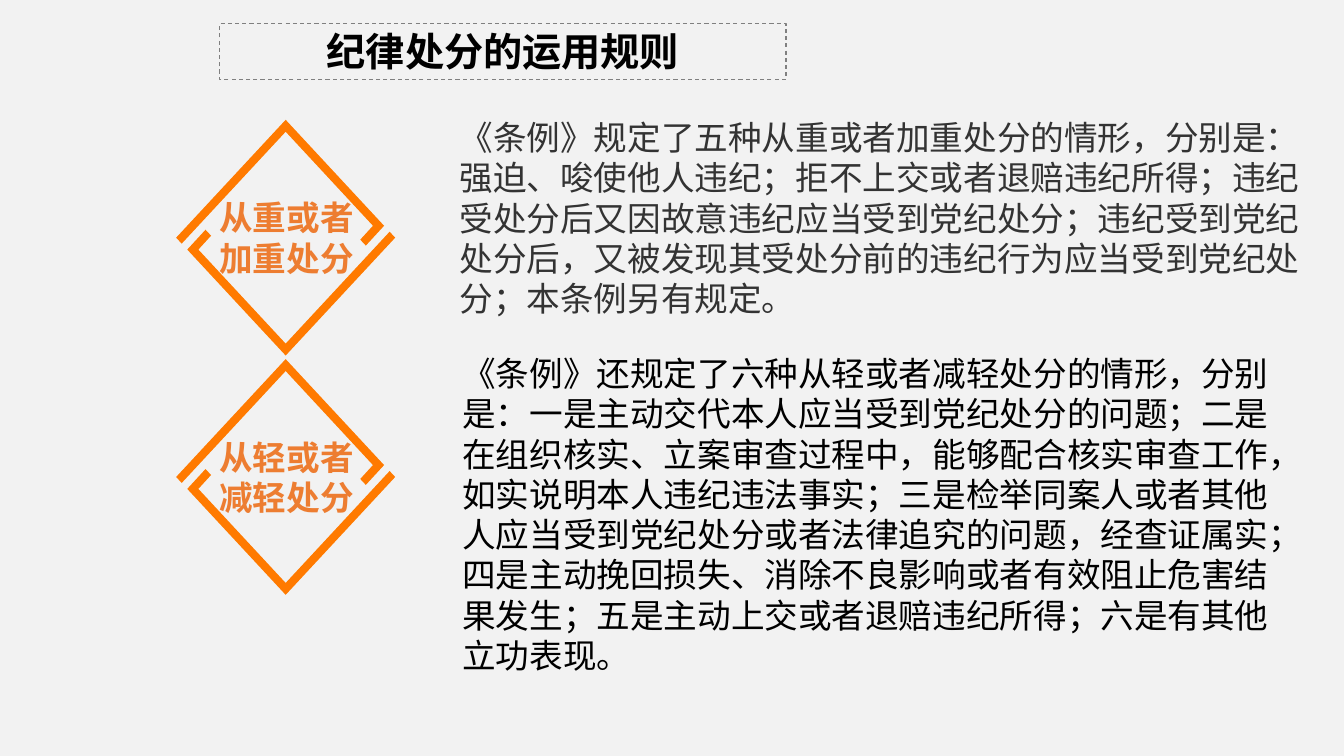
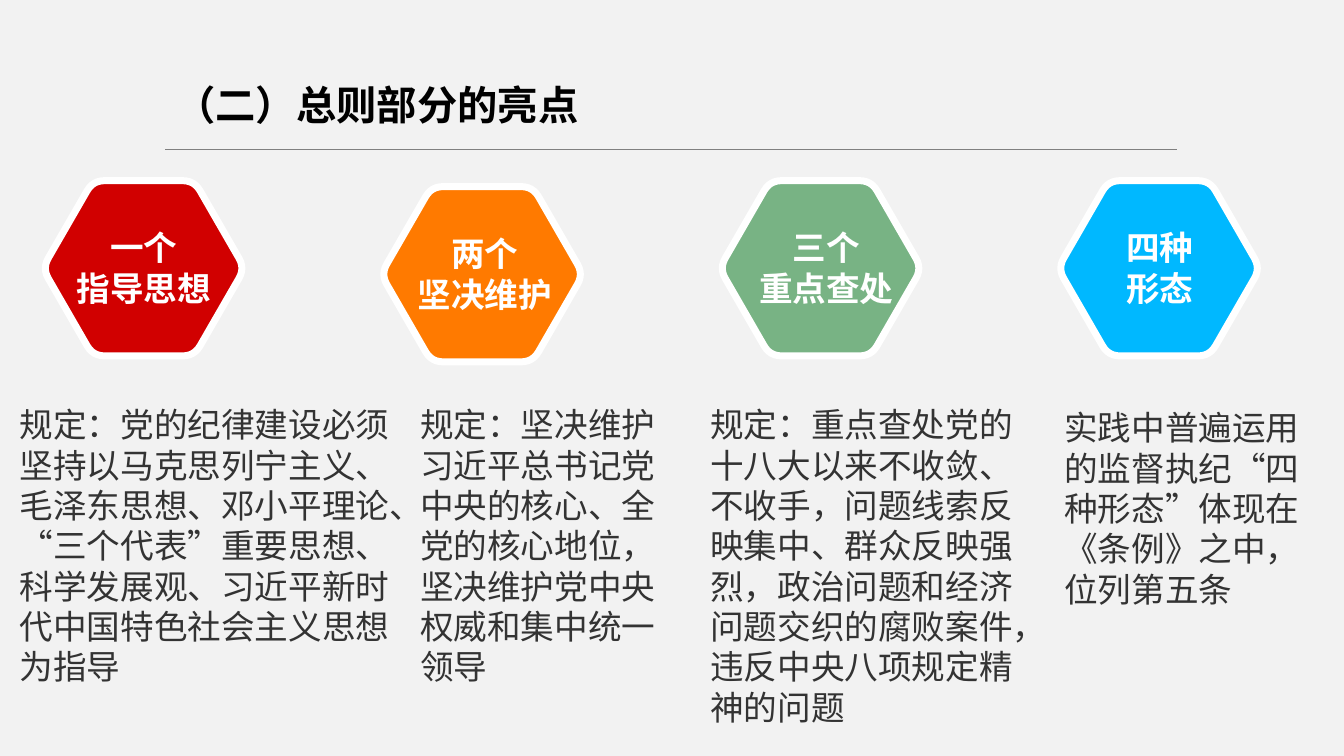
import math
from dataclasses import dataclass
from itertools import chain

from lxml import etree
from pptx import Presentation
from pptx.dml.color import RGBColor
from pptx.enum import dml, shapes, text
from pptx.oxml import ns
from pptx.util import Cm, Pt

FONT = "Noto Sans CJK SC"
BACKGROUND = RGBColor(0xF2, 0xF2, 0xF2)
BLACK = RGBColor(0x00, 0x00, 0x00)
WHITE = RGBColor(0xFF, 0xFF, 0xFF)
BODY_GREY = RGBColor(0x33, 0x33, 0x33)
RULE_GREY = RGBColor(0x80, 0x80, 0x80)
LABEL_ORANGE = RGBColor(0xED, 0x7D, 0x31)
ORANGE = RGBColor(0xFF, 0x7A, 0x00)
RED = RGBColor(0xD1, 0x00, 0x00)
GREEN = RGBColor(0x78, 0xB3, 0x84)
BLUE = RGBColor(0x00, 0xB8, 0xFF)

BODY_SIZE = 24
DEFAULT_INSETS = (0.25, 0.13, 0.25, 0.13)
NO_INSETS = (0, 0, 0, 0)

Point = tuple[float, float]

# Lower half of the split diamond, in cm from its centre
CHEVRON: list[Point] = [(-2.02, -0.2), (-1.88, -0.05), (-2.2, 0.3), (0, 2.67),
                        (2.62, -0.15), (2.76, 0), (0, 2.97), (-2.48, 0.3)]
DIAMOND_X = 7.2

HEXAGON_RADIUS = 2.55
HEXAGON_CUT = 0.115
FIRST_HEXAGON_X, HEXAGON_PITCH = 3.62, 8.53
LABEL_HEIGHT = 2.06


@dataclass(frozen=True)
class TextStyle:
    color: RGBColor
    size: float = BODY_SIZE
    bold: bool = False
    centred: bool = False


@dataclass(frozen=True)
class Box:
    left: float
    top: float
    width: float
    height: float

    def lengths(self) -> tuple[Cm, Cm, Cm, Cm]:
        return Cm(self.left), Cm(self.top), Cm(self.width), Cm(self.height)


@dataclass(frozen=True)
class Rule:
    """A kind of punishment rule: diamond label and explanation."""
    label: str
    centre_y: float
    body: str
    body_box: Box
    body_color: RGBColor


@dataclass(frozen=True)
class Highlight:
    """A highlight of the general provisions: hexagon and explanation."""
    label: str
    color: RGBColor
    centre_y: float
    label_left: float
    label_width: float
    body: str
    body_box: Box


BODY = TextStyle(BODY_GREY)
DIAMOND_LABEL = TextStyle(LABEL_ORANGE, bold=True, centred=True)
HEXAGON_LABEL = TextStyle(WHITE, bold=True, centred=True)

RULES = [
    Rule("从重或者加重处分", 5.99,
         "《条例》规定了五种从重或者加重处分的情形，分别是：强迫、唆使他人违纪；"
         "拒不上交或者退赔违纪所得；违纪受处分后又因故意违纪应当受到党纪处分；"
         "违纪受到党纪处分后，又被发现其受处分前的违纪行为应当受到党纪处分；"
         "本条例另有规定。",
         Box(11.33, 2.82, 22, 5.38), BODY_GREY),
    Rule("从轻或者减轻处分", 12.02,
         "《条例》还规定了六种从轻或者减轻处分的情形，分别是：一是主动交代本人应当"
         "受到党纪处分的问题；二是在组织核实、立案审查过程中，能够配合核实审查工作，"
         "如实说明本人违纪违法事实；三是检举同案人或者其他人应当受到党纪处分或者法律"
         "追究的问题，经查证属实；四是主动挽回损失、消除不良影响或者有效阻止危害结果"
         "发生；五是主动上交或者退赔违纪所得；六是有其他立功表现。",
         Box(11.4, 8.76, 21.49, 8.46), BLACK),
]

HIGHLIGHTS = [
    Highlight("一个\n指导思想", RED, 6.76, 1.9, 3.45,
              "规定：党的纪律建设必须坚持以马克思列宁主义、毛泽东思想、邓小平理论、"
              "“三个代表”重要思想、科学发展观、习近平新时代中国特色社会主义思想为指导",
              Box(0.25, 10.06, 9.96, 7.44)),
    Highlight("两个\n坚决维护", ORANGE, 6.91, 10.39, 3.66,
              "规定：坚决维护习近平总书记党中央的核心、全党的核心地位，"
              "坚决维护党中央权威和集中统一领导",
              Box(10.34, 10.06, 7.19, 7.44)),
    Highlight("三个\n重点查处", GREEN, 6.76, 19.1, 3.45,
              "规定：重点查处党的十八大以来不收敛、不收手，问题线索反映集中、"
              "群众反映强烈，政治问题和经济问题交织的腐败案件，违反中央八项规定精神的问题",
              Box(17.65, 10.06, 8.76, 8.46)),
    Highlight("四种\n形态", BLUE, 6.76, 27.61, 3.23,
              "实践中普遍运用的监督执纪“四种形态”体现在《条例》之中，位列第五条",
              Box(26.57, 10.13, 7.14, 5.38)),
]


def write(shape, content: str, style: TextStyle, insets=DEFAULT_INSETS,
          anchor=text.MSO_ANCHOR.TOP, wrap: bool = True) -> None:
    frame = shape.text_frame
    frame.text = content
    frame.word_wrap = wrap
    frame.vertical_anchor = anchor
    (frame.margin_left, frame.margin_top,
     frame.margin_right, frame.margin_bottom) = map(Cm, insets)
    for paragraph in frame.paragraphs:
        paragraph.alignment = (text.PP_ALIGN.CENTER if style.centred
                               else text.PP_ALIGN.LEFT)
        for run in paragraph.runs:
            run.font.size = Pt(style.size)
            run.font.bold = style.bold
            run.font.color.rgb = style.color
            run.font.name = FONT
            properties = run.font._element
            properties.set("lang", "zh-CN")
            latin = properties.find(ns.qn("a:latin"))
            east_asian = etree.Element(ns.qn("a:ea"), typeface=FONT)
            latin.addnext(east_asian)


def add_text(slide, box: Box, content: str, style: TextStyle,
             insets=DEFAULT_INSETS, wrap: bool = True) -> None:
    textbox = slide.shapes.add_textbox(*box.lengths())
    write(textbox, content, style, insets, wrap=wrap)
    textbox.text_frame.auto_size = text.MSO_AUTO_SIZE.SHAPE_TO_FIT_TEXT


def add_outline(slide, centre: Point, contours: list[list[Point]],
                color: RGBColor):
    """Add one filled freeform from contours given in cm around a centre."""
    placed = [[(Cm(centre[0] + x), Cm(centre[1] + y)) for x, y in contour]
              for contour in contours]
    builder = slide.shapes.build_freeform(*placed[0][0])
    builder.add_line_segments(placed[0][1:], close=True)
    for contour in placed[1:]:
        builder.move_to(*contour[0])
        builder.add_line_segments(contour[1:], close=True)
    outline = builder.convert_to_shape()
    outline.shadow.inherit = False
    outline.fill.solid()
    outline.fill.fore_color.rgb = color
    outline.line.fill.background()
    return outline


def rounded_corner(before: Point, corner: Point, after: Point,
                   steps: int = 6) -> list[Point]:
    """Sample a quadratic curve that cuts a share of both sides."""
    start, end = (tuple(c + HEXAGON_CUT * (n - c) for c, n in zip(corner, side))
                  for side in (before, after))
    return [tuple((1 - t) ** 2 * s + 2 * t * (1 - t) * c + t ** 2 * e
                  for s, c, e in zip(start, corner, end))
            for t in (step / steps for step in range(steps + 1))]


def rounded_hexagon() -> list[Point]:
    corners = [(HEXAGON_RADIUS * math.cos(i * math.pi / 3),
                HEXAGON_RADIUS * math.sin(i * math.pi / 3)) for i in range(6)]
    return list(chain.from_iterable(
        rounded_corner(corners[i - 1], corners[i], corners[(i + 1) % 6])
        for i in range(6)))


def add_rule(slide, rule: Rule) -> None:
    turned = [(-x, -y) for x, y in CHEVRON]
    diamond = add_outline(slide, (DIAMOND_X, rule.centre_y),
                          [CHEVRON, turned], ORANGE)
    write(diamond, rule.label, DIAMOND_LABEL, (0.89, 0.13, 0.85, 0.13),
          text.MSO_ANCHOR.MIDDLE)
    add_text(slide, rule.body_box, rule.body, TextStyle(rule.body_color))


def add_highlight(slide, index: int, highlight: Highlight) -> None:
    centre = (FIRST_HEXAGON_X + index * HEXAGON_PITCH, highlight.centre_y)
    hexagon = add_outline(slide, centre, [rounded_hexagon()], highlight.color)
    hexagon.line.color.rgb = WHITE
    hexagon.line.width = Pt(5)
    label_box = Box(highlight.label_left, highlight.centre_y - LABEL_HEIGHT / 2,
                    highlight.label_width, LABEL_HEIGHT)
    add_text(slide, label_box, highlight.label, HEXAGON_LABEL, NO_INSETS)
    add_text(slide, highlight.body_box, highlight.body, BODY)


def build_rules_slide(slide) -> None:
    title = slide.shapes.add_shape(shapes.MSO_SHAPE.RECTANGLE,
                                   *Box(5.54, 0.6, 14.27, 1.4).lengths())
    title.shadow.inherit = False
    title.fill.background()
    title.line.color.rgb = RULE_GREY
    title.line.width = Pt(0.75)
    title.line.dash_style = dml.MSO_LINE.DASH
    write(title, "纪律处分的运用规则", TextStyle(BLACK, 28, True, True),
          (0.2, 0.1, 0.2, 0.1))
    for rule in RULES:
        add_rule(slide, rule)


def build_highlights_slide(slide) -> None:
    for index, highlight in enumerate(HIGHLIGHTS):
        add_highlight(slide, index, highlight)
    add_text(slide, Box(4.17, 1.9, 10.74, 1.5), "（二）总则部分的亮点",
             TextStyle(BLACK, 28.8, True), wrap=False)
    underline = slide.shapes.add_connector(
        shapes.MSO_CONNECTOR.STRAIGHT, Cm(4.17), Cm(3.76), Cm(29.67), Cm(3.76))
    underline.line.color.rgb = RULE_GREY
    underline.line.width = Pt(0.5)
    etree.SubElement(underline._element.spPr, ns.qn("a:effectLst"))


def main() -> None:
    deck = Presentation()
    deck.slide_width, deck.slide_height = Cm(33.87), Cm(19.05)
    backdrop = deck.slide_master.background.fill
    backdrop.solid()
    backdrop.fore_color.rgb = BACKGROUND
    blank = deck.slide_layouts[6]
    for build in (build_rules_slide, build_highlights_slide):
        build(deck.slides.add_slide(blank))
    deck.save("out.pptx")


if __name__ == "__main__":
    main()
